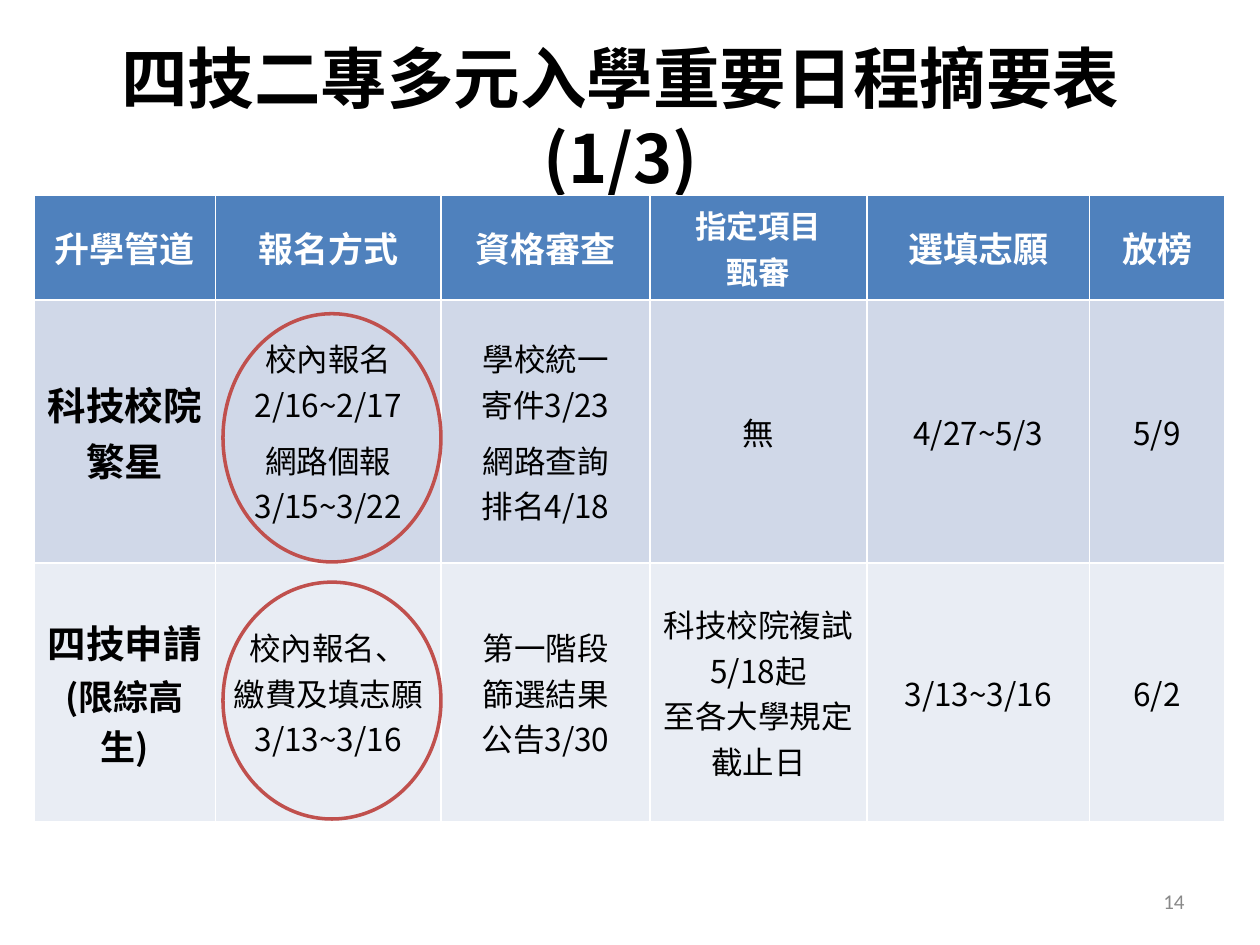
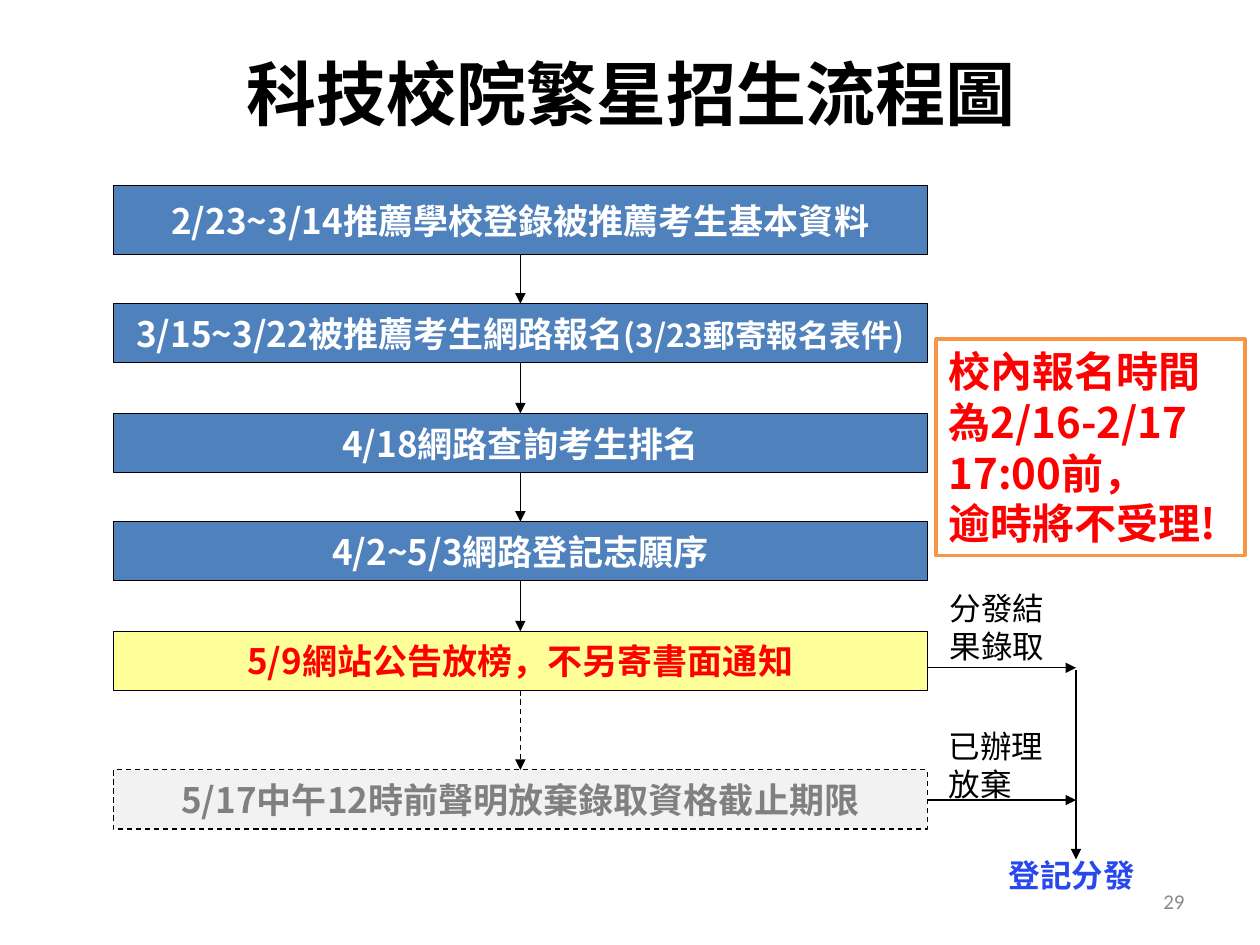
from dataclasses import dataclass
from itertools import pairwise
from typing import Optional

from lxml.etree import SubElement
from pptx import Presentation
from pptx.dml.color import RGBColor
from pptx.enum.dml import MSO_LINE
from pptx.enum.shapes import MSO_CONNECTOR, MSO_SHAPE
from pptx.enum.text import MSO_ANCHOR, PP_ALIGN
from pptx.oxml.ns import qn
from pptx.util import Inches, Pt


# Theme
@dataclass(frozen=True)
class Theme:
    sans: str = "Noto Sans CJK SC"
    mono: str = "Noto Sans Mono"
    number_font: str = "Calibri"
    black: str = "000000"
    white: str = "FFFFFF"
    blue: str = "4F81BD"
    band_dark: str = "D0D8E8"
    band_light: str = "E9EDF4"
    ring: str = "C0504D"
    yellow: str = "FFFF99"
    red: str = "FF0000"
    pale: str = "F2F2F2"
    grey: str = "808080"
    number: str = "898989"
    orange: str = "F79646"
    link_blue: str = "2748ED"
    title_size: int = 40
    long_title_size: int = 38
    note_size: int = 24
    channel_size: int = 22
    step_size: int = 20
    body_size: int = 18
    number_size: int = 12
    thin_line: float = 0.75
    thick_line: float = 2
    line_height: float = 1.21


THEME = Theme()


@dataclass(frozen=True)
class Area:
    left: float
    top: float
    width: float
    height: float

    def lengths(self) -> tuple:
        return tuple(Inches(v) for v in (self.left, self.top, self.width, self.height))


@dataclass(frozen=True)
class Style:
    size: float = THEME.body_size
    color: str = THEME.black
    bold: bool = False
    font: str = THEME.sans
    align: PP_ALIGN = PP_ALIGN.CENTER


@dataclass(frozen=True)
class CellText:
    text: str
    size: int = THEME.body_size
    small_second: Optional[int] = None
    spaced_second: bool = False


@dataclass(frozen=True)
class Step:
    text: str
    top: float
    height: float = 0.47
    fill: str = THEME.blue
    color: str = THEME.white
    dashed: bool = False
    remark: str = ""


@dataclass(frozen=True)
class Label:
    text: str
    area: Area
    style: Style


# Shared drawing functions
def style_span(span, style: Style) -> None:
    font = span.font
    font.size, font.bold, font.name = Pt(style.size), style.bold, style.font
    font.color.rgb = RGBColor.from_string(style.color)
    SubElement(span._r.get_or_add_rPr(), qn("a:ea")).set("typeface", style.font)


def style_frame(frame, style: Style, line_height: Optional[float] = THEME.line_height) -> None:
    for para in frame.paragraphs:
        para.alignment = style.align
        if line_height:
            para.line_spacing = Pt(round(style.size * line_height, 1))
        for span in para.runs:
            style_span(span, style)


def add_text(page, area: Area, text: str, style: Style, anchor=MSO_ANCHOR.TOP):
    box = page.shapes.add_textbox(*area.lengths())
    frame = box.text_frame
    frame.word_wrap = True
    frame.vertical_anchor = anchor
    frame.text = text
    style_frame(frame, style)
    return box


def set_line(line, color: str, width: float, dashed: bool = False) -> None:
    line.color.rgb = RGBColor.from_string(color)
    line.width = Pt(width)
    if dashed:
        line.dash_style = MSO_LINE.DASH


def add_arrow(page, start: tuple, end: tuple, dashed: bool = False) -> None:
    arrow = page.shapes.add_connector(
        MSO_CONNECTOR.STRAIGHT, *(Inches(v) for v in (*start, *end)))
    set_line(arrow.line, THEME.black, THEME.thin_line, dashed)
    SubElement(arrow.line._get_or_add_ln(), qn("a:tailEnd")).set("type", "triangle")
    SubElement(arrow._element.spPr, qn("a:effectLst"))


def add_page(deck, title: str, area: Area, size: int, number: int):
    page = deck.slides.add_slide(deck.slide_layouts[6])
    add_text(page, area, title, Style(size, bold=True), MSO_ANCHOR.MIDDLE)
    add_text(page, Area(7.17, 6.95, 2.33, 0.4), str(number),
             Style(THEME.number_size, THEME.number, font=THEME.number_font, align=PP_ALIGN.RIGHT),
             MSO_ANCHOR.MIDDLE)
    return page


# Schedule table: \n starts a paragraph, \v breaks a line
COLUMN_WIDTHS = (1.44, 1.79, 1.66, 1.72, 1.77, 1.07)
ROW_HEIGHTS = (0.83, 2.09, 2.05)
ROW_FILLS = (THEME.blue, THEME.band_dark, THEME.band_light)
TIGHT_COLUMN = 3
SCHEDULE = (
    (
        CellText("升學管道", 20), CellText("報名方式", 20), CellText("資格審查", 20),
        CellText("指定項目\n甄審"), CellText("選填志願", 20), CellText("放榜", 20),
    ),
    (
        CellText("科技校院繁星", THEME.channel_size),
        CellText("校內報名2/16~2/17\n網路個報\n3/15~3/22", spaced_second=True),
        CellText("學校統一\v寄件3/23\n網路查詢\n排名4/18", spaced_second=True),
        CellText("無"), CellText("4/27~5/3"), CellText("5/9"),
    ),
    (
        CellText("四技申請\n(限綜高生)", THEME.channel_size, small_second=20),
        CellText("校內報名、\n繳費及填志願\v3/13~3/16"),
        CellText("第一階段\v篩選結果\n公告3/30"),
        CellText("科技校院複試5/18起\v至各大學規定截止日"),
        CellText("3/13~3/16"), CellText("6/2"),
    ),
)


def fill_cell(cell, content: CellText, row: int, column: int) -> None:
    cell.fill.solid()
    cell.fill.fore_color.rgb = RGBColor.from_string(ROW_FILLS[row])
    cell.vertical_anchor = MSO_ANCHOR.MIDDLE
    if column == TIGHT_COLUMN:
        cell.margin_left = cell.margin_right = cell.margin_top = cell.margin_bottom = 0
    frame = cell.text_frame
    frame.text = content.text
    color = THEME.black if row else THEME.white
    style_frame(frame, Style(content.size, color, row == 0 or column == 0), None)
    if content.spaced_second:
        frame.paragraphs[1].space_before = Pt(6)
    if content.small_second:
        for span in frame.paragraphs[1].runs:
            span.font.size = Pt(content.small_second)


def build_schedule(deck) -> None:
    page = add_page(deck, "四技二專多元入學重要日程摘要表\v(1/3)",
                    Area(0.2, 0.3, 9.45, 1.25), THEME.long_title_size, 14)
    area = Area(0.27, 1.55, sum(COLUMN_WIDTHS), sum(ROW_HEIGHTS))
    table = page.shapes.add_table(len(ROW_HEIGHTS), len(COLUMN_WIDTHS), *area.lengths()).table
    for column, width in zip(table.columns, COLUMN_WIDTHS):
        column.width = Inches(width)
    for row, height in zip(table.rows, ROW_HEIGHTS):
        row.height = Inches(height)
    for row, contents in enumerate(SCHEDULE):
        for column, content in enumerate(contents):
            fill_cell(table.cell(row, column), content, row, column)
    # Rings around the registration dates
    for top, height in ((2.49, 1.97), (4.62, 1.88)):
        ring = page.shapes.add_shape(MSO_SHAPE.OVAL, *Area(1.77, top, 1.73, height).lengths())
        ring.shadow.inherit = False
        ring.fill.background()
        set_line(ring.line, THEME.ring, THEME.thick_line)


# Admission flow chart
STEP_LEFT, STEP_WIDTH = 0.9, 6.46
STEP_RIGHT = STEP_LEFT + STEP_WIDTH
STEP_CENTER = STEP_LEFT + STEP_WIDTH / 2
EXIT_X = 8.54
STEPS = (
    Step("2/23~3/14推薦學校登錄被推薦考生基本資料", 1.47, 0.55),
    Step("3/15~3/22被推薦考生網路報名", 2.41, remark="(3/23郵寄報名表件)"),
    Step("4/18網路查詢考生排名", 3.28),
    Step("4/2~5/3網路登記志願序", 4.14),
    Step("5/9網站公告放榜，不另寄書面通知", 5.01, fill=THEME.yellow, color=THEME.red),
    Step("5/17中午12時前聲明放棄錄取資格截止期限", 6.11,
         fill=THEME.pale, color=THEME.grey, dashed=True),
)
SIDE_STYLE = Style(font=THEME.mono, align=PP_ALIGN.LEFT)
LABELS = (
    Label("分發結果錄取", Area(7.44, 4.62, 0.95, 0.71), SIDE_STYLE),
    Label("已辦理放棄", Area(7.43, 5.72, 0.95, 0.71), SIDE_STYLE),
    Label("登記分發", Area(7.91, 6.74, 1.34, 0.4),
          Style(color=THEME.link_blue, bold=True, align=PP_ALIGN.LEFT)),
)


def add_step(page, step: Step) -> None:
    area = Area(STEP_LEFT, step.top, STEP_WIDTH, step.height)
    box = page.shapes.add_shape(MSO_SHAPE.RECTANGLE, *area.lengths())
    box.shadow.inherit = False
    box.fill.solid()
    box.fill.fore_color.rgb = RGBColor.from_string(step.fill)
    set_line(box.line, THEME.black, THEME.thin_line, step.dashed)
    frame = box.text_frame
    frame.word_wrap = False
    frame.vertical_anchor = MSO_ANCHOR.MIDDLE
    frame.text = step.text
    style_frame(frame, Style(THEME.step_size, step.color, True))
    if step.remark:
        span = frame.paragraphs[0].add_run()
        span.text = step.remark
        style_span(span, Style(THEME.body_size, step.color, True))


def build_flow(deck) -> None:
    page = add_page(deck, "科技校院繁星招生流程圖",
                    Area(0.51, 0.11, 9, 1.25), THEME.title_size, 29)
    for step in STEPS:
        add_step(page, step)
    for upper, lower in pairwise(STEPS):
        add_arrow(page, (STEP_CENTER, upper.top + upper.height),
                  (STEP_CENTER, lower.top), lower.dashed)
    # Exits to the later allocation
    for y in (5.3, 6.35):
        add_arrow(page, (STEP_RIGHT, y), (EXIT_X, y))
    add_arrow(page, (EXIT_X, 5.32), (EXIT_X, 6.82))
    for label in LABELS:
        add_text(page, label.area, label.text, label.style)
    # Deadline note
    note = add_text(page, Area(7.43, 2.69, 2.45, 1.72),
                    "校內報名時間為2/16-2/17\n17:00前，\n逾時將不受理!",
                    Style(THEME.note_size, THEME.red, True, align=PP_ALIGN.LEFT))
    note.fill.solid()
    note.fill.fore_color.rgb = RGBColor.from_string(THEME.white)
    set_line(note.line, THEME.orange, THEME.thick_line)


def main() -> None:
    deck = Presentation()
    deck.slide_width, deck.slide_height = Inches(10), Inches(7.5)
    build_schedule(deck)
    build_flow(deck)
    deck.save("out.pptx")


if __name__ == "__main__":
    main()
